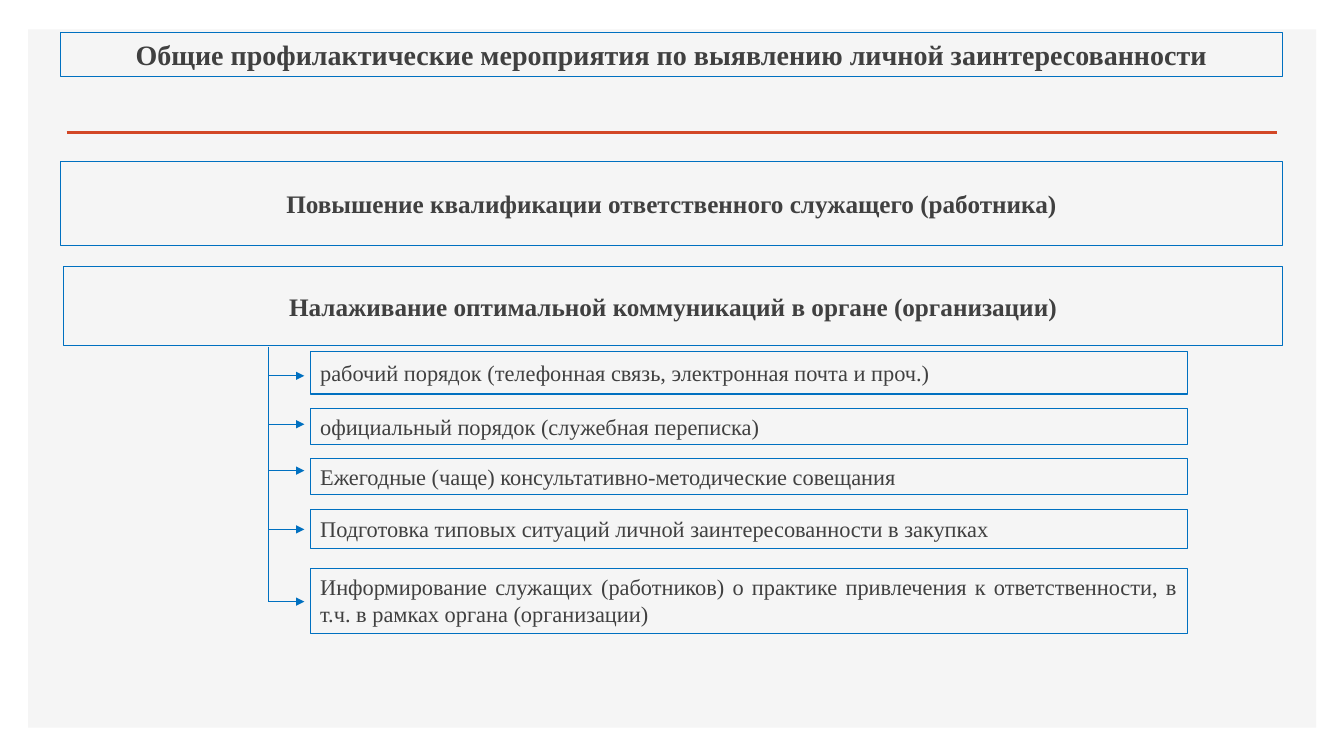
from dataclasses import dataclass

from lxml import etree
from pptx import Presentation
from pptx.dml.color import RGBColor
from pptx.enum.shapes import MSO_CONNECTOR, MSO_SHAPE
from pptx.enum.text import MSO_ANCHOR, MSO_AUTO_SIZE, PP_ALIGN
from pptx.oxml.ns import qn
from pptx.slide import Slide
from pptx.util import Cm, Pt

PANEL_GREY = RGBColor(0xF5, 0xF5, 0xF5)
RULE_ORANGE = RGBColor(0xD2, 0x47, 0x26)
LINE_BLUE = RGBColor(0x00, 0x70, 0xC0)
TEXT_GREY = RGBColor(0x40, 0x40, 0x40)
FONT_NAME = "Times New Roman"

RECTANGLE = MSO_SHAPE.RECTANGLE
STRAIGHT = MSO_CONNECTOR.STRAIGHT
LEFT, CENTER, JUSTIFY = PP_ALIGN.LEFT, PP_ALIGN.CENTER, PP_ALIGN.JUSTIFY
TOP, MIDDLE = MSO_ANCHOR.TOP, MSO_ANCHOR.MIDDLE
GROW = MSO_AUTO_SIZE.SHAPE_TO_FIT_TEXT

# Lengths are centimetres.
TRUNK_X = 6.76
TRUNK_TOP = 8.74
ARROW_END_X = 7.67
MEASURE_LEFT = 7.82
MEASURE_WIDTH = 22.1


@dataclass(frozen=True)
class Box:
    text: str
    left: float
    top: float
    width: float
    height: float
    size: int
    bold: bool = True
    alignment: PP_ALIGN = CENTER
    grows: bool = False


@dataclass(frozen=True)
class Measure:
    text: str
    top: float
    height: float
    arrow_y: float
    alignment: PP_ALIGN = JUSTIFY
    grows: bool = False


HEADINGS = [
    Box("Общие профилактические мероприятия по выявлению личной заинтересованности",
        1.52, 0.81, 30.81, 1.12, 20, grows=True),
    Box("Повышение квалификации ответственного служащего (работника)",
        1.52, 4.06, 30.81, 2.13, 18),
    Box("Налаживание оптимальной коммуникаций в органе (организации)",
        1.6, 6.71, 30.73, 2.01, 18),
]

MEASURES = [
    Measure("рабочий порядок (телефонная связь, электронная почта и проч.)",
            8.86, 1.07, 9.47),
    Measure("официальный порядок (служебная переписка)", 10.29, 0.91, 10.69),
    Measure("Ежегодные (чаще) консультативно-методические совещания",
            11.56, 0.91, 11.86, LEFT),
    Measure("Подготовка типовых ситуаций личной заинтересованности в закупках",
            12.83, 0.99, 13.34, LEFT),
    Measure("Информирование служащих (работников) о практике привлечения "
            "к ответственности, в т.ч. в рамках органа (организации)",
            14.33, 1.63, 15.16, grows=True),
]


def add_panel(slide: Slide) -> None:
    panel = slide.shapes.add_shape(RECTANGLE, Cm(0.71), Cm(0.74), Cm(32.46), Cm(17.6))
    panel.shadow.inherit = False
    panel.fill.solid()
    panel.fill.fore_color.rgb = PANEL_GREY
    panel.line.fill.background()


def add_box(slide: Slide, box: Box) -> None:
    shape = slide.shapes.add_shape(
        RECTANGLE, Cm(box.left), Cm(box.top), Cm(box.width), Cm(box.height))
    shape.shadow.inherit = False
    shape.fill.background()
    shape.line.color.rgb = LINE_BLUE
    shape.line.width = Pt(0.75)

    text_frame = shape.text_frame
    text_frame.word_wrap = True
    text_frame.vertical_anchor = TOP if box.grows else MIDDLE
    if box.grows:
        text_frame.auto_size = GROW
    text_frame.text = box.text
    paragraph = text_frame.paragraphs[0]
    paragraph.alignment = box.alignment
    font = paragraph.runs[0].font
    font.name = FONT_NAME
    font.size = Pt(box.size)
    font.bold = box.bold
    font.color.rgb = TEXT_GREY


def add_line(slide: Slide, start: tuple[float, float], end: tuple[float, float],
             color: RGBColor = LINE_BLUE, width: float = 0.75,
             arrow: bool = False) -> None:
    connector = slide.shapes.add_connector(
        STRAIGHT, Cm(start[0]), Cm(start[1]), Cm(end[0]), Cm(end[1]))
    connector.line.color.rgb = color
    connector.line.width = Pt(width)
    properties = connector._element.spPr
    if arrow:
        etree.SubElement(properties.find(qn("a:ln")), qn("a:tailEnd"), type="triangle")
    etree.SubElement(properties, qn("a:effectLst"))


def add_measures(slide: Slide) -> None:
    """Draw the trunk with an arrow and a box for each measure."""
    add_line(slide, (TRUNK_X, TRUNK_TOP), (TRUNK_X, MEASURES[-1].arrow_y))
    for measure in MEASURES:
        add_line(slide, (TRUNK_X, measure.arrow_y), (ARROW_END_X, measure.arrow_y),
                 arrow=True)
        add_box(slide, Box(measure.text, MEASURE_LEFT, measure.top, MEASURE_WIDTH,
                           measure.height, 16, False, measure.alignment, measure.grows))


def main() -> None:
    presentation = Presentation()
    presentation.slide_width = Cm(33.87)
    presentation.slide_height = Cm(19.05)
    slide = presentation.slides.add_slide(presentation.slide_layouts[6])

    add_panel(slide)
    add_line(slide, (1.68, 3.33), (32.18, 3.33), RULE_ORANGE, 2)
    for heading in HEADINGS:
        add_box(slide, heading)
    add_measures(slide)

    presentation.save("out.pptx")


if __name__ == "__main__":
    main()
